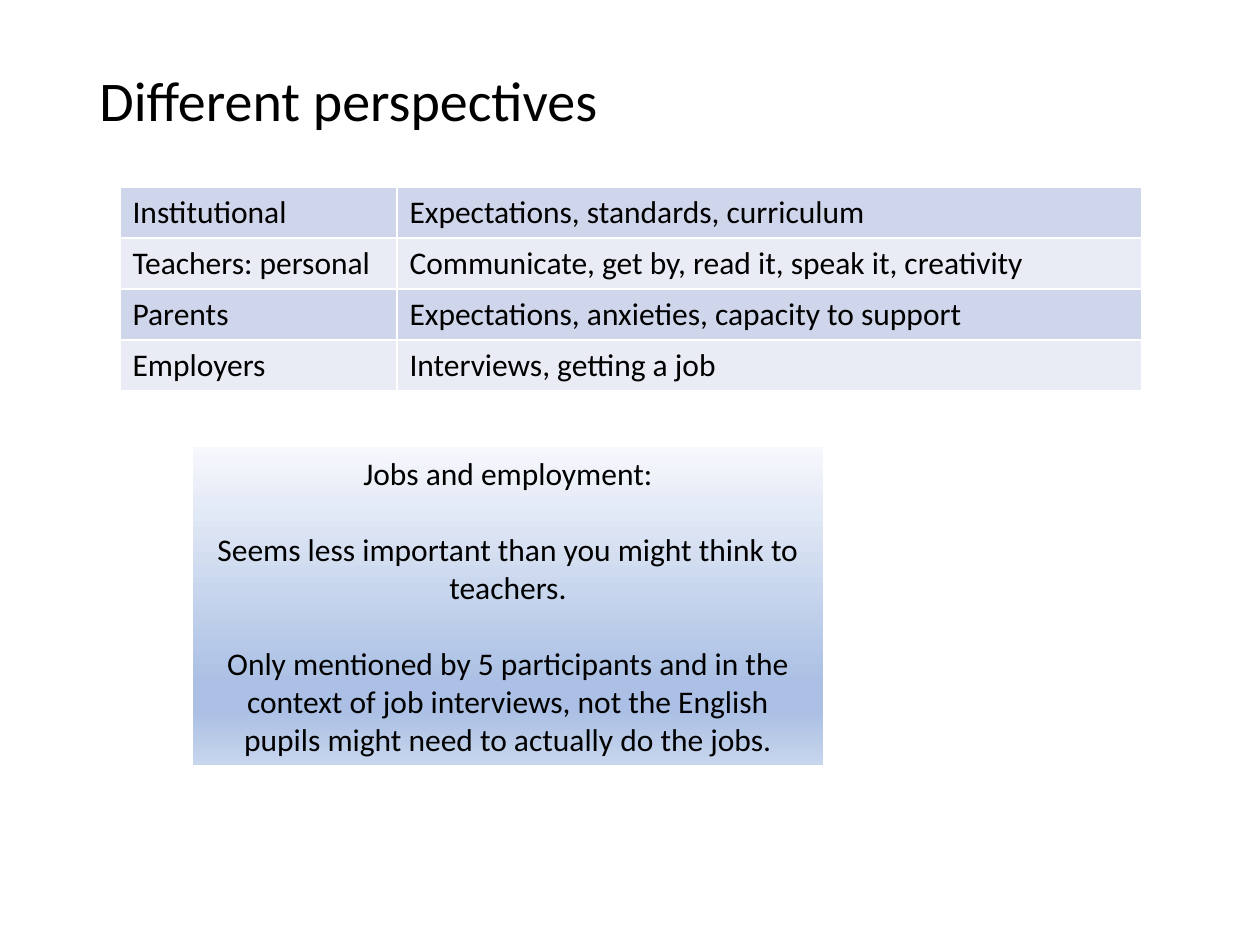
from dataclasses import dataclass

from lxml import etree
from pptx import Presentation
from pptx.dml.color import RGBColor
from pptx.enum.shapes import MSO_SHAPE
from pptx.enum.text import MSO_ANCHOR, PP_ALIGN
from pptx.oxml.ns import qn
from pptx.util import Pt

RECTANGLE = MSO_SHAPE.RECTANGLE
MIDDLE = MSO_ANCHOR.MIDDLE
CENTER = PP_ALIGN.CENTER

# Content
TITLE = "Different perspectives"
PERSPECTIVES = [
    ("Institutional", "Expectations, standards, curriculum"),
    ("Teachers: personal", "Communicate, get by, read it, speak it, creativity"),
    ("Parents", "Expectations, anxieties, capacity to support"),
    ("Employers", "Interviews, getting a job"),
]
JOBS_NOTE = [
    "Jobs and employment:",
    "Seems less important than you might think to teachers.",
    "Only mentioned by 5 participants and in the context of job interviews, "
    "not the English pupils might need to actually do the jobs.",
]

# Layout in px: left, top, width, height
PX_PER_INCH = 126
PAGE_SIZE = (1260, 945)
TITLE_AREA = (87, 48, 1086, 110)
TABLE_ORIGIN = (120, 187)
COLUMN_WIDTHS = (277, 745)
ROW_HEIGHT = 51
NOTE_AREA = (193, 447, 630, 318)


@dataclass(frozen=True)
class Theme:
    font: str = "Calibri"
    title_size: int = 32
    body_size: int = 18
    note_gap: int = 22
    border_width: int = 1
    text: str = "000000"
    border: str = "FFFFFF"
    bands: tuple = ("CFD5EA", "E9EBF5")
    gradient: tuple = ((0, "F6F8FC"), (74, "ABC0E4"), (83, "ABC0E4"), (100, "C7D5ED"))


THEME = Theme()


def emu(px):
    return round(px * 914400 / PX_PER_INCH)


def style_text(frame, size):
    for paragraph in frame.paragraphs:
        for span in paragraph.runs:
            span.font.name = THEME.font
            span.font.size = Pt(size)
            span.font.color.rgb = RGBColor.from_string(THEME.text)


def add_color(parent, color):
    etree.SubElement(parent, qn("a:srgbClr"), val=color)


def add_borders(cell):
    properties = cell._tc.get_or_add_tcPr()
    for position, side in enumerate(("lnL", "lnR", "lnT", "lnB")):
        line = etree.Element(qn(f"a:{side}"), w=str(Pt(THEME.border_width)))
        add_color(etree.SubElement(line, qn("a:solidFill")), THEME.border)
        properties.insert(position, line)


def set_gradient(shape):
    shape.fill.gradient()
    shape.fill.gradient_angle = 270  # counter-clockwise: top to bottom
    stops = shape._element.spPr.find(qn("a:gradFill")).find(qn("a:gsLst"))
    for stop in list(stops):
        stops.remove(stop)
    for percent, color in THEME.gradient:
        stop = etree.SubElement(stops, qn("a:gs"), pos=str(percent * 1000))
        add_color(stop, color)


def add_title(page):
    box = page.shapes.add_textbox(*map(emu, TITLE_AREA))
    frame = box.text_frame
    frame.word_wrap = True
    frame.vertical_anchor = MIDDLE
    frame.text = TITLE
    frame.paragraphs[0].line_spacing = 0.9
    style_text(frame, THEME.title_size)


def add_perspectives(page):
    size = (sum(COLUMN_WIDTHS), ROW_HEIGHT * len(PERSPECTIVES))
    table = page.shapes.add_table(
        len(PERSPECTIVES), len(COLUMN_WIDTHS), *map(emu, TABLE_ORIGIN + size)
    ).table
    table.first_row = False
    table.horz_banding = False
    for column, width in zip(table.columns, COLUMN_WIDTHS):
        column.width = emu(width)
    for index, texts in enumerate(PERSPECTIVES):
        table.rows[index].height = emu(ROW_HEIGHT)
        band = THEME.bands[index % len(THEME.bands)]
        for cell, text in zip(table.rows[index].cells, texts):
            cell.text_frame.text = text
            style_text(cell.text_frame, THEME.body_size)
            cell.fill.solid()
            cell.fill.fore_color.rgb = RGBColor.from_string(band)
            add_borders(cell)


def add_jobs_note(page):
    note = page.shapes.add_shape(RECTANGLE, *map(emu, NOTE_AREA))
    note.shadow.inherit = False
    note.line.fill.background()
    set_gradient(note)
    frame = note.text_frame
    frame.word_wrap = True
    frame.vertical_anchor = MIDDLE
    frame.text = "\n".join(JOBS_NOTE)
    for index, paragraph in enumerate(frame.paragraphs):
        paragraph.alignment = CENTER
        if index:
            paragraph.space_before = Pt(THEME.note_gap)
    style_text(frame, THEME.body_size)


def main():
    deck = Presentation()
    deck.slide_width, deck.slide_height = map(emu, PAGE_SIZE)
    page = deck.slides.add_slide(deck.slide_layouts[6])
    add_title(page)
    add_perspectives(page)
    add_jobs_note(page)
    deck.save("out.pptx")


if __name__ == "__main__":
    main()
